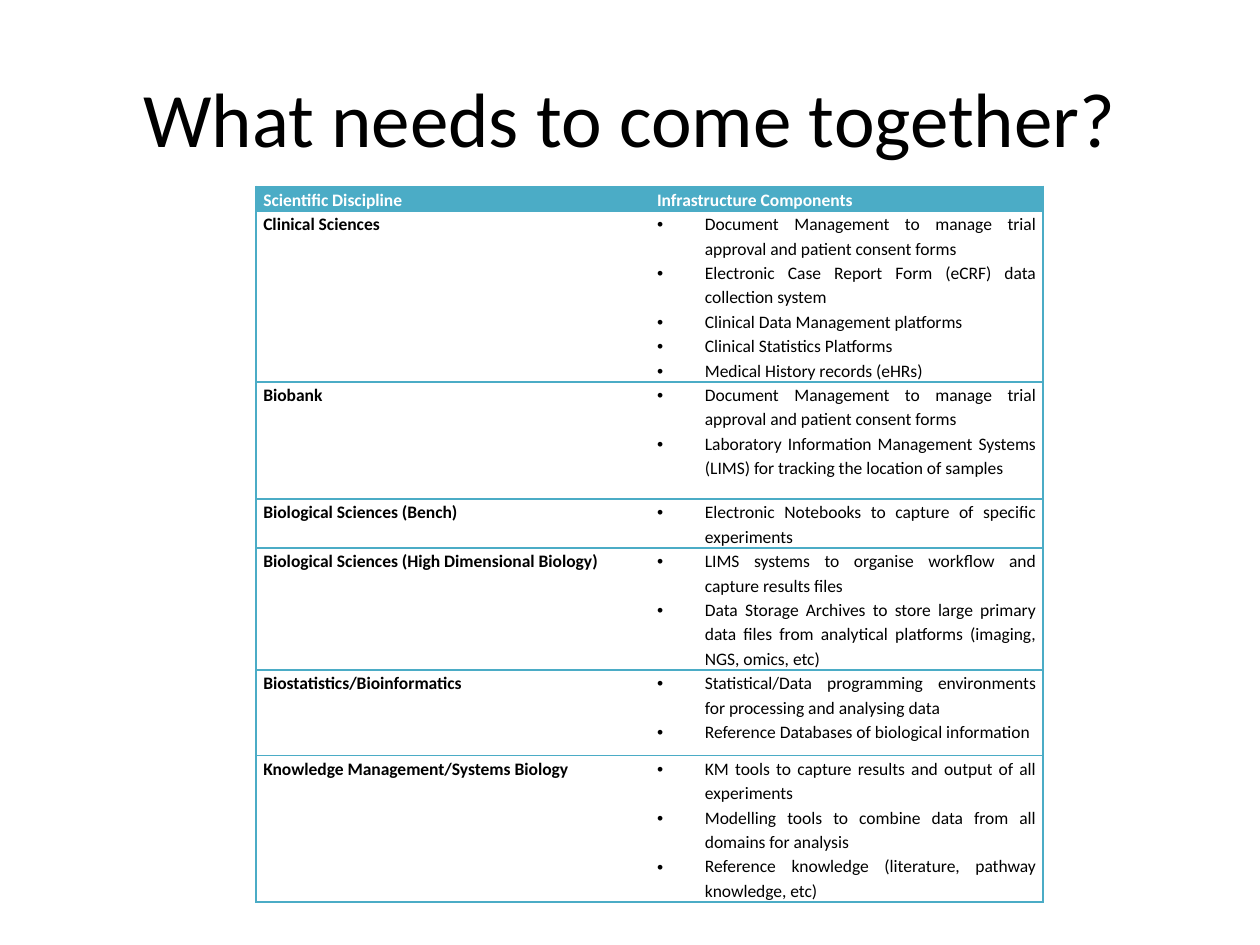
from lxml.etree import SubElement
from pptx import Presentation
from pptx.dml.color import RGBColor
from pptx.enum.text import MSO_ANCHOR as Anchor, PP_ALIGN as Align
from pptx.oxml.ns import qn
from pptx.util import Inches, Pt

TEAL, BLACK, WHITE = "4BACC6", "000000", "FFFFFF"
NO_STYLE = "{2D5ABB26-0587-4C30-8999-92F81FD0307C}"
HEADINGS = ("Scientific Discipline", "Infrastructure Components")
CONSENT_FORMS = "Document Management to manage trial approval and patient consent forms"

# Discipline, row height in inches, components
DISCIPLINES = [
    ("Clinical Sciences", 1.31, [
        CONSENT_FORMS,
        "Electronic Case Report Form (eCRF) data collection system",
        "Clinical Data Management platforms",
        "Clinical Statistics Platforms",
        "Medical History records (eHRs)"]),
    ("Biobank", 0.93, [
        CONSENT_FORMS,
        "Laboratory Information Management Systems (LIMS) for tracking the location of samples"]),
    ("Biological Sciences (Bench)", 0.37, [
        "Electronic Notebooks to capture of specific experiments"]),
    ("Biological Sciences (High Dimensional Biology)", 0.93, [
        "LIMS systems to organise workflow and capture results files",
        "Data Storage Archives to store large primary data files from analytical platforms "
        "(imaging, NGS, omics, etc)"]),
    ("Biostatistics/Bioinformatics", 0.68, [
        "Statistical/Data programming environments for processing and analysing data",
        "Reference Databases of biological information"]),
    ("Knowledge Management/Systems Biology", 1.12, [
        "KM tools to capture results and output of all experiments",
        "Modelling tools to combine data from all domains for analysis",
        "Reference knowledge (literature, pathway knowledge, etc)"]),
]


def rgb(value):
    return RGBColor.from_string(value)


class SlideBuilder:
    font = "Calibri"
    cell_size = 10
    header_height = 0.19

    def __init__(self, deck):
        self.slide = deck.slides.add_slide(deck.slide_layouts[5])

    def style_runs(self, paragraph, size, color, bold=False):
        for run in paragraph.runs:
            run.font.name, run.font.size, run.font.bold = self.font, Pt(size), bold
            run.font.color.rgb = rgb(color)

    def title(self, text, left, top, width, height):
        title = self.slide.shapes.title
        title.left, title.top = Inches(left), Inches(top)
        title.width, title.height = Inches(width), Inches(height)
        title.text_frame.text = text
        title.text_frame.vertical_anchor = Anchor.MIDDLE
        heading = title.text_frame.paragraphs[0]
        heading.alignment = Align.CENTER
        self.style_runs(heading, 44, BLACK)

    def borders(self, cell, sides):
        """Draw a teal line on the named sides and none on the others."""
        properties = cell._tc.get_or_add_tcPr()
        for side in "LRTB":
            line = SubElement(properties, qn(f"a:ln{side}"), w=str(Pt(1)))
            if side in sides:
                fill = SubElement(line, qn("a:solidFill"))
                SubElement(fill, qn("a:srgbClr"), val=TEAL)
            else:
                SubElement(line, qn("a:noFill"))

    def bullet(self, paragraph):
        properties = paragraph._p.get_or_add_pPr()
        properties.set("marL", str(Inches(0.38)))
        properties.set("indent", str(-Inches(0.38)))
        SubElement(properties, qn("a:buFont"), typeface="Arial")
        SubElement(properties, qn("a:buChar"), char="•")

    def cell(self, cell, lines, color=BLACK, bold=False, fill=None, bulleted=False):
        cell.margin_left = cell.margin_right = Inches(0.06)
        cell.margin_top = cell.margin_bottom = 0
        if fill:
            cell.fill.solid()
            cell.fill.fore_color.rgb = rgb(fill)
        else:
            cell.fill.background()
        cell.text_frame.text = "\n".join(lines)
        for paragraph in cell.text_frame.paragraphs:
            paragraph.alignment = Align.JUSTIFY
            paragraph.line_spacing = 1.15
            if bulleted:
                self.bullet(paragraph)
            self.style_runs(paragraph, self.cell_size, color, bold)

    def discipline_table(self, left, top, width):
        heights = [self.header_height] + [height for _, height, _ in DISCIPLINES]
        table = self.slide.shapes.add_table(
            len(heights), len(HEADINGS), Inches(left), Inches(top),
            Inches(width), Inches(sum(heights))).table
        table._tbl.tblPr.find(qn("a:tableStyleId")).text = NO_STYLE
        table.horz_banding = False
        for row, height in zip(table.rows, heights):
            row.height = Inches(height)
            for cell, sides in zip(row.cells, ("LTB", "RTB")):
                self.borders(cell, sides)
        for column, heading in enumerate(HEADINGS):
            self.cell(table.cell(0, column), [heading], WHITE, bold=True, fill=TEAL)
        for row, (discipline, _, components) in enumerate(DISCIPLINES, start=1):
            self.cell(table.cell(row, 0), [discipline], bold=True)
            self.cell(table.cell(row, 1), components, bulleted=True)


def main():
    deck = Presentation()
    deck.slide_width, deck.slide_height = Inches(10), Inches(7.5)
    builder = SlideBuilder(deck)
    builder.title("What needs to come together?", 0.5, 0.3, 9, 1.25)
    builder.discipline_table(2.03, 1.48, 6.25)
    deck.save("out.pptx")


if __name__ == "__main__":
    main()
